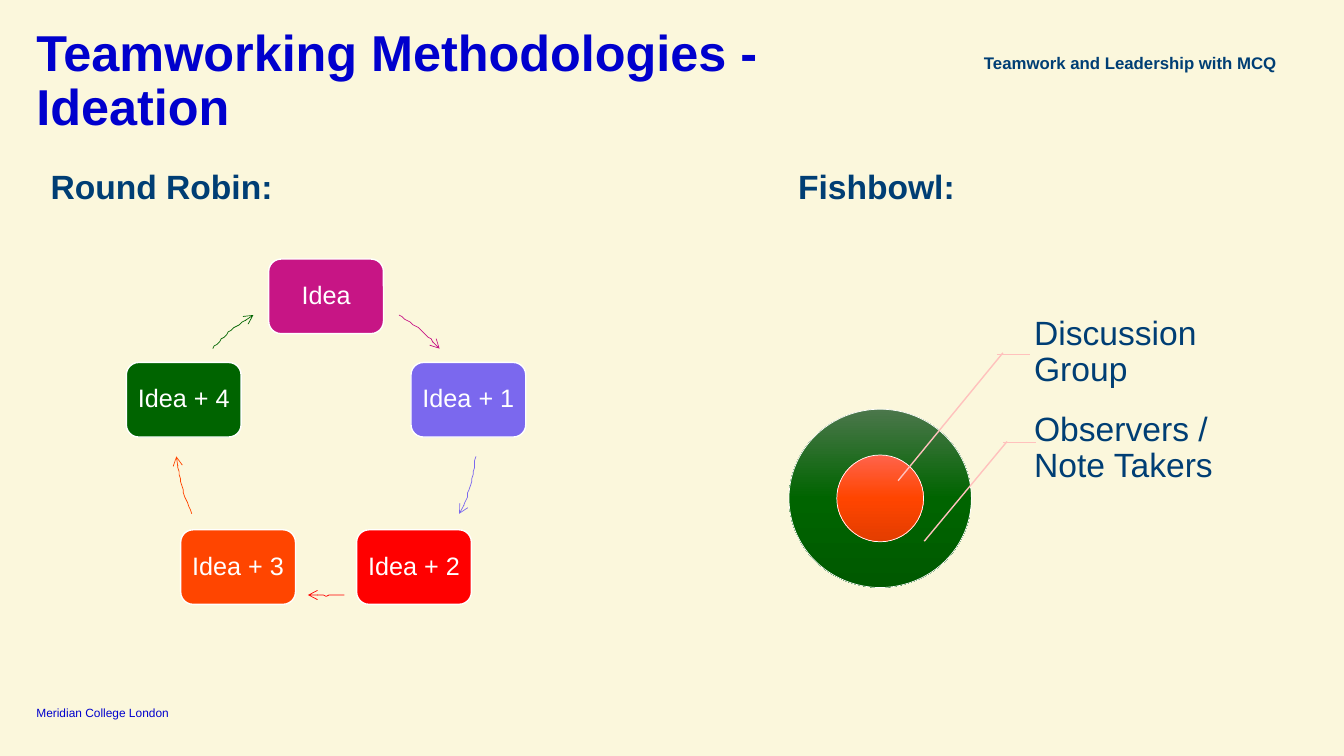
from copy import deepcopy
from math import cos, radians, sin

from pptx import Presentation
from pptx.dml.color import RGBColor
from pptx.enum.shapes import MSO_CONNECTOR, MSO_SHAPE
from pptx.enum.text import MSO_ANCHOR as ANCHOR, PP_ALIGN as ALIGN
from pptx.oxml.ns import qn
from pptx.oxml.xmlchemy import OxmlElement
from pptx.util import Pt

NAVY, BLUE, WHITE, PINK = "003E74", "0000CD", "FFFFFF", "FFC1BD"

# text, box (left, top, width, height), size, colour, bold, inset, style
TEXTS = [
    ("Meridian College London", (26, 503, 150, 11), 8.5, BLUE, False, (0, 0, 0, 0),
     dict(anchor=ANCHOR.BOTTOM)),
    ("Teamworking Methodologies - Ideation", (26, 20, 625, 30), 36, BLUE, True, (0, 0, 0, 0),
     dict(spacing=0.9)),
    ("Teamwork and Leadership with MCQ", (666, 36.7, 246, 24.5), 12, NAVY, True, (0, 0, 0, 0),
     dict(spacing=1.05, align=ALIGN.RIGHT)),
    ("Round Robin:", (29, 115.2, 254, 36), 24, NAVY, True, (7.2, 3.6, 7.2, 3.6), {}),
    ("Fishbowl:", (563, 115.2, 254, 36), 24, NAVY, True, (7.2, 3.6, 7.2, 3.6), {}),
]

# label, colour, start and end of the arrow that follows (degrees clockwise from the top)
IDEAS = [
    ("Idea", "C71585", 29.2, 49.4),
    ("Idea + 1", "7B68EE", 94.1, 116.7),
    ("Idea + 2", "FF0000", 172.9, 187.1),
    ("Idea + 3", "FF4500", 243.3, 265.9),
    ("Idea + 4", "006400", 310.6, 330.8),
]
RING_X, RING_Y, RING_R = 232.9, 318.6, 106.9
NODE_W, NODE_H = 82, 53.3

# width, height, gradient from top to bottom
BOWL_X, BOWL_Y = 628.7, 356
BOWLS = [
    (130.3, 127.4, ("4B774B", "006400", "005900")),
    (62, 62, ("FF634B", "FF4500", "E33D00")),
]

# label, top of the text, then the ends of the flat and the slanted line
CALLOUTS = [
    ("Discussion Group", 213.1, (712, 253.4, 736, 253.4), (716.4, 252, 641.5, 343.4)),
    ("Observers / Note Takers", 281.5, (716.4, 316.1, 740.2, 316.1), (719.3, 315.4, 660.2, 386.6)),
]


def rgb(colour):
    return RGBColor.from_string(colour)


def write(sp, text, size, colour, bold=False, inset=(0, 0, 0, 0), anchor=ANCHOR.TOP,
          align=ALIGN.LEFT, spacing=1.0):
    tf = sp.text_frame
    tf.word_wrap = True
    tf.vertical_anchor = anchor
    tf.margin_left, tf.margin_top, tf.margin_right, tf.margin_bottom = map(Pt, inset)
    p = tf.paragraphs[0]
    p.text, p.alignment, p.line_spacing = text, align, spacing
    p.font.name, p.font.size, p.font.bold = "Arial", Pt(size), bold
    p.font.color.rgb = rgb(colour)


def add_text(s, text, box, *args, **style):
    write(s.shapes.add_textbox(*map(Pt, box)), text, *args, **style)


def add_centred(s, kind, x, y, w, h, line_width):
    """Add a white-outlined preset shape centred on x, y."""
    sp = s.shapes.add_shape(kind, Pt(x - w / 2), Pt(y - h / 2), Pt(w), Pt(h))
    sp.shadow.inherit = False
    sp.line.color.rgb, sp.line.width = rgb(WHITE), Pt(line_width)
    return sp


def ring_point(angle):
    a = radians(angle)
    return RING_X + RING_R * sin(a), RING_Y - RING_R * cos(a)


def add_arc_arrow(s, start, end, colour, steps=16):
    points = [ring_point(start + (end - start) * i / steps) for i in range(steps + 1)]
    builder = s.shapes.build_freeform(*points[0], scale=Pt(1))
    builder.add_line_segments(points[1:], close=False)
    sp = builder.convert_to_shape()
    sp.shadow.inherit = False
    sp.fill.background()
    sp.line.color.rgb, sp.line.width = rgb(colour), Pt(0.5)
    tail = OxmlElement("a:tailEnd")
    tail.set("type", "arrow")
    sp.line._get_or_add_ln().append(tail)


def fill_gradient(sp, colours):
    """Fill with evenly spaced colours running downwards."""
    sp.fill.gradient()
    sp.fill.gradient_angle = 270
    stop_list = sp._element.spPr.find(qn("a:gradFill")).find(qn("a:gsLst"))
    stop_list.append(deepcopy(stop_list[0]))
    for i, (stop, colour) in enumerate(zip(sp.fill.gradient_stops, colours)):
        stop.position, stop.color.rgb = i / (len(colours) - 1), rgb(colour)


def add_line(s, ends):
    c = s.shapes.add_connector(MSO_CONNECTOR.STRAIGHT, *map(Pt, ends))
    c.line.color.rgb, c.line.width = rgb(PINK), Pt(1)
    c._element.spPr.append(OxmlElement("a:effectLst"))


def main():
    prs = Presentation()
    prs.slide_width, prs.slide_height = Pt(960), Pt(540)
    s = prs.slides.add_slide(prs.slide_layouts[6])
    s.background.fill.solid()
    s.background.fill.fore_color.rgb = rgb("FBF7DC")

    for text, box, size, colour, bold, inset, style in TEXTS:
        add_text(s, text, box, size, colour, bold, inset, **style)

    for i, (label, colour, start, end) in enumerate(IDEAS):
        x, y = ring_point(i * 360 / len(IDEAS))
        sp = add_centred(s, MSO_SHAPE.ROUNDED_RECTANGLE, x, y, NODE_W, NODE_H, 1)
        sp.fill.solid()
        sp.fill.fore_color.rgb = rgb(colour)
        write(sp, label, 18, WHITE, inset=(5, 5, 5, 5), anchor=ANCHOR.MIDDLE,
              align=ALIGN.CENTER, spacing=0.9)
        add_arc_arrow(s, start, end, colour)

    for w, h, colours in BOWLS:
        fill_gradient(add_centred(s, MSO_SHAPE.OVAL, BOWL_X, BOWL_Y, w, h, 0.5), colours)

    for label, top, flat, slant in CALLOUTS:
        add_text(s, label, (725, top, 149.5, 77.8), 24, NAVY, inset=(13.7, 2.2, 2.2, 2.2),
                 anchor=ANCHOR.MIDDLE, spacing=0.9)
        add_line(s, flat)
        add_line(s, slant)

    prs.save("out.pptx")


if __name__ == "__main__":
    main()
